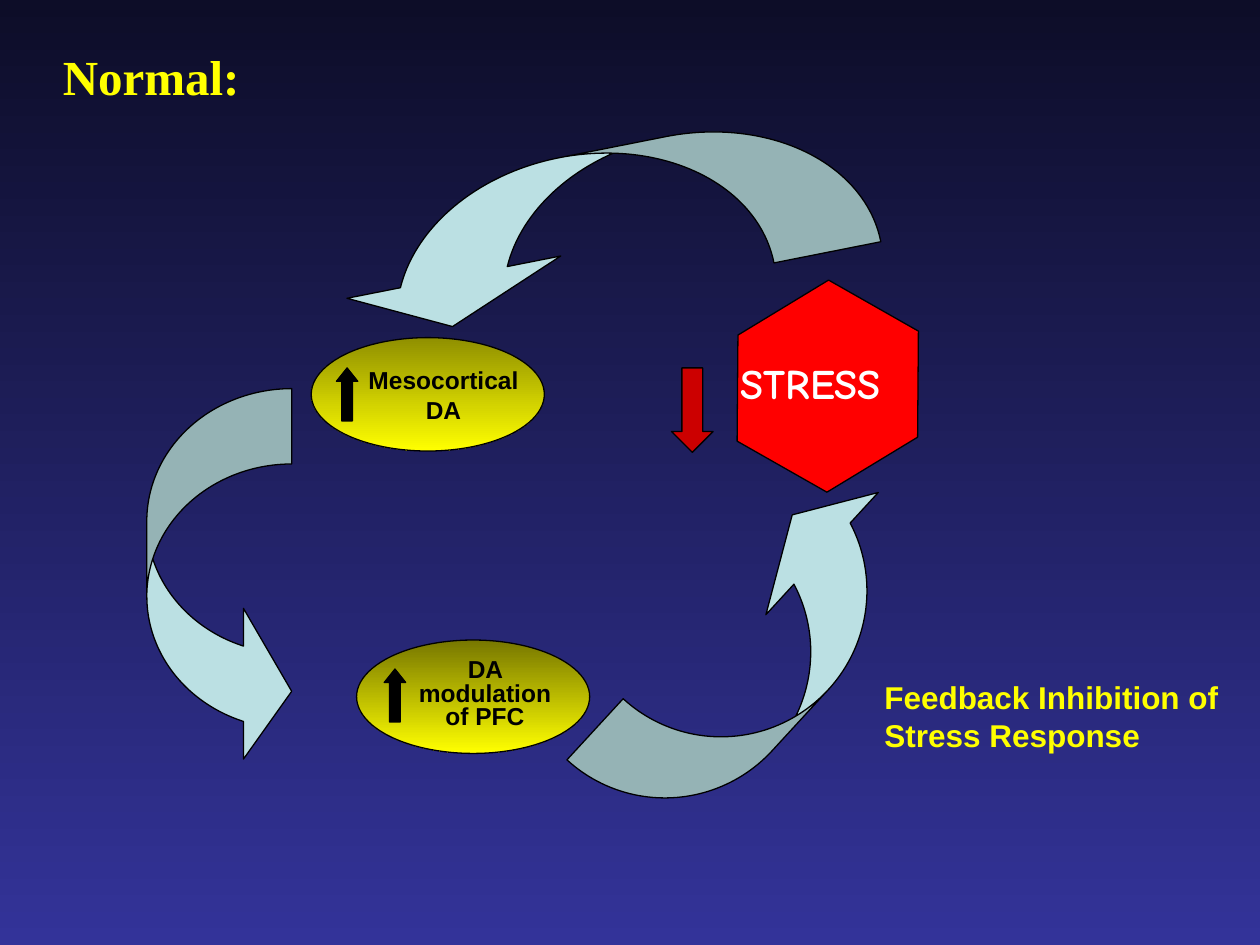
from dataclasses import dataclass

from pptx import Presentation
from pptx.dml.color import RGBColor
from pptx.enum.shapes import MSO_SHAPE
from pptx.enum.text import MSO_AUTO_SIZE, PP_ALIGN
from pptx.util import Inches, Pt

BLACK = RGBColor(0x00, 0x00, 0x00)
WHITE = RGBColor(0xFF, 0xFF, 0xFF)
YELLOW = RGBColor(0xFF, 0xFF, 0x00)
OLIVE = RGBColor(0x90, 0x90, 0x00)
DARK_OLIVE = RGBColor(0x77, 0x77, 0x00)
RED = RGBColor(0xFF, 0x00, 0x00)
DARK_RED = RGBColor(0xCC, 0x00, 0x00)
PALE_BLUE = RGBColor(0xBB, 0xE0, 0xE3)
NIGHT = RGBColor(0x0D, 0x0D, 0x28)
INDIGO = RGBColor(0x33, 0x33, 0x99)


@dataclass(frozen=True)
class Figure:
    kind: MSO_SHAPE
    left: float
    top: float
    width: float
    height: float
    colors: tuple[RGBColor, ...]
    adjustments: tuple[float, ...] = ()
    rotation: float = 0


@dataclass(frozen=True)
class Label:
    text: str
    left: float
    top: float
    width: float
    height: float
    font: str
    size: int
    color: RGBColor
    wrap: bool = False
    align: PP_ALIGN = PP_ALIGN.LEFT
    line_spacing: float = 1.0


def ellipse(left: float, top: float, shade: RGBColor) -> Figure:
    return Figure(MSO_SHAPE.OVAL, left, top, 1.85, 0.9, (shade, YELLOW))


def increase_arrow(left: float, top: float) -> Figure:
    return Figure(MSO_SHAPE.UP_ARROW, left, top, 0.17, 0.42, (BLACK,), (0.5, 0.625))


def cycle_arrow(left: float, top: float, width: float, thickness: float,
                rotation: float) -> Figure:
    """Curved arrow whose head is twice as wide as its band."""
    return Figure(MSO_SHAPE.CURVED_UP_ARROW, left, top, width, 1.15, (PALE_BLUE,),
                  (thickness, 2 * thickness, 0.333), rotation)


def ellipse_label(text: str, left: float, top: float, width: float, height: float,
                  line_spacing: float = 1.0) -> Label:
    return Label(text, left, top, width, height, "Arial", 14, BLACK,
                 True, PP_ALIGN.CENTER, line_spacing)


ITEMS = (
    Figure(MSO_SHAPE.HEXAGON, 5.75, 2.33, 1.64, 1.47, (RED,), (0.279, 1.155), 29.6),
    Label("STRESS", 5.78, 2.79, 1.55, 0.5, "Comic Neue", 24, WHITE),
    ellipse(2.47, 2.68, OLIVE),
    ellipse_label("Mesocortical DA", 2.8, 2.85, 1.44, 0.57),
    increase_arrow(2.67, 2.92),
    cycle_arrow(2.59, 1.2, 4.33, 0.752, 168.8),
    ellipse(2.83, 5.08, DARK_OLIVE),
    ellipse_label("DA modulation of PFC", 3.17, 5.19, 1.36, 0.66, 0.8),
    increase_arrow(3.05, 5.31),
    cycle_arrow(0.24, 4.01, 3, 0.52, 90),
    Label("Feedback Inhibition of\nStress Response", 6.92, 5.33, 2.85, 0.7,
          "Arial", 18, YELLOW),
    Figure(MSO_SHAPE.DOWN_ARROW, 5.33, 2.92, 0.33, 0.67, (DARK_RED,), (0.5, 0.5)),
    cycle_arrow(4.39, 4.63, 3.3, 0.573, 312.6),
    Label("Normal:", 0.4, 0.32, 1.61, 0.57, "Times New Roman", 28, YELLOW),
)


def apply_fill(fill, colors: tuple[RGBColor, ...]) -> None:
    """One colour gives a solid fill, two a gradient from top to bottom."""
    if len(colors) == 1:
        fill.solid()
        fill.fore_color.rgb = colors[0]
        return
    fill.gradient()
    fill.gradient_angle = 270
    for stop, color in zip(fill.gradient_stops, colors):
        stop.color.rgb = color


def draw_figure(slide, figure: Figure) -> None:
    shape = slide.shapes.add_shape(
        figure.kind, Inches(figure.left), Inches(figure.top),
        Inches(figure.width), Inches(figure.height))
    shape.shadow.inherit = False
    shape.rotation = figure.rotation
    for index, value in enumerate(figure.adjustments):
        shape.adjustments[index] = value
    apply_fill(shape.fill, figure.colors)
    shape.line.color.rgb = BLACK
    shape.line.width = Pt(0.75)


def draw_label(slide, label: Label) -> None:
    box = slide.shapes.add_textbox(
        Inches(label.left), Inches(label.top),
        Inches(label.width), Inches(label.height))
    frame = box.text_frame
    frame.text = label.text
    frame.word_wrap = label.wrap
    frame.auto_size = MSO_AUTO_SIZE.SHAPE_TO_FIT_TEXT
    for para in frame.paragraphs:
        para.alignment = label.align
        para.line_spacing = label.line_spacing
        for span in para.runs:
            span.font.name = label.font
            span.font.size = Pt(label.size)
            span.font.bold = True
            span.font.color.rgb = label.color


def main() -> None:
    deck = Presentation()
    deck.slide_width = Inches(10)
    deck.slide_height = Inches(7.5)
    page = deck.slides.add_slide(deck.slide_layouts[6])
    apply_fill(page.background.fill, (NIGHT, INDIGO))
    for item in ITEMS:
        if isinstance(item, Figure):
            draw_figure(page, item)
        else:
            draw_label(page, item)
    deck.save("out.pptx")


if __name__ == "__main__":
    main()
